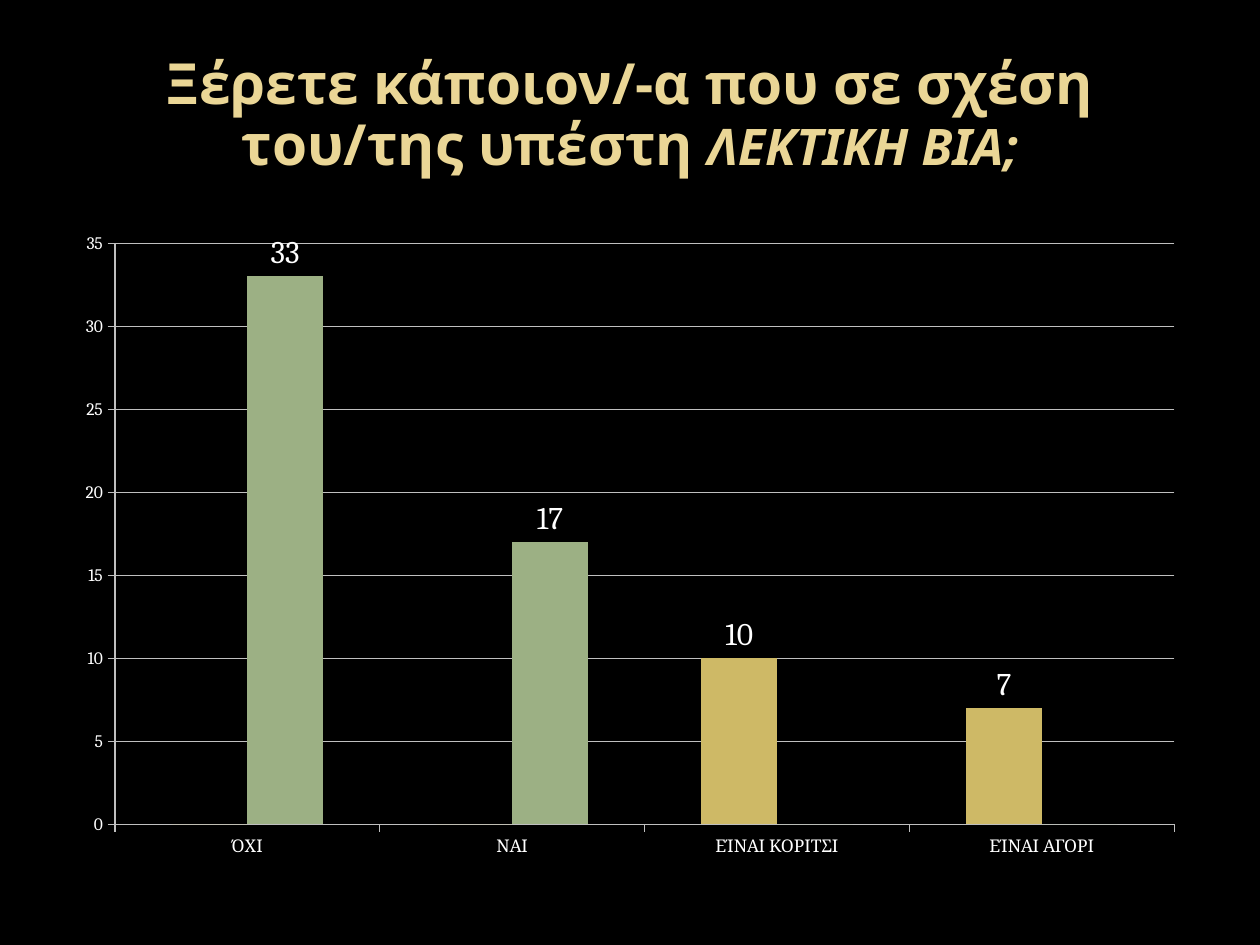
from dataclasses import dataclass

from pptx import Presentation
from pptx.chart.data import CategoryChartData
from pptx.dml.color import RGBColor
from pptx.enum.chart import XL_CHART_TYPE, XL_LABEL_POSITION, XL_TICK_MARK
from pptx.enum.text import MSO_ANCHOR, MSO_AUTO_SIZE, PP_ALIGN
from pptx.util import Inches, Pt


@dataclass(frozen=True)
class Theme:
    background: RGBColor = RGBColor.from_string("000000")
    title: RGBColor = RGBColor.from_string("EAD696")
    text: RGBColor = RGBColor.from_string("FFFFFF")
    line: RGBColor = RGBColor.from_string("BFBFBF")
    title_font: str = "Noto Sans"
    chart_font: str = "Cambria"
    question_size: float = 32.4
    topic_size: float = 28.8
    axis_size: float = 10
    label_size: float = 18


@dataclass(frozen=True)
class Box:
    """Shares of the slide's width and height."""
    left: float
    top: float
    width: float
    height: float

    def lengths(self, deck) -> tuple[int, int, int, int]:
        wide, high = deck.slide_width, deck.slide_height
        return (round(self.left * wide), round(self.top * high),
                round(self.width * wide), round(self.height * high))


@dataclass(frozen=True)
class Answers:
    name: str
    counts: tuple[int, ...]
    color: str


THEME = Theme()
TITLE_BOX = Box(0.05, 0.3 / 7.5, 0.9, 1.25 / 7.5)
CHART_BOX = Box(0.05, 1.75 / 7.5, 0.9, 5.15 / 7.5)
CATEGORIES = ("ΌΧΙ", "ΝΑΙ", "ΕΊΝΑΙ ΚΟΡΙΤΣΙ", "ΕΊΝΑΙ ΑΓΟΡΙ")
SERIES = (
    Answers("Series 1", (0, 0, 10, 7), "CEB966"),
    Answers("Series 2", (33, 17, 0, 0), "9CB084"),
)


def add_title(deck, page) -> None:
    title = page.shapes.title
    title.left, title.top, title.width, title.height = TITLE_BOX.lengths(deck)
    frame = title.text_frame
    frame.word_wrap = True
    frame.auto_size = MSO_AUTO_SIZE.NONE
    frame.vertical_anchor = MSO_ANCHOR.MIDDLE
    para = frame.paragraphs[0]
    para.alignment = PP_ALIGN.CENTER
    para.line_spacing = 0.9
    for words, size, italic in (
        ("Ξέρετε κάποιον/-α που σε σχέση του/της υπέστη ", THEME.question_size, False),
        ("ΛΕΚΤΙΚΗ ΒΙΑ;", THEME.topic_size, True),
    ):
        span = para.add_run()
        span.text = words
        span.font.name = THEME.title_font
        span.font.size = Pt(size)
        span.font.bold = True
        span.font.italic = italic
        span.font.color.rgb = THEME.title


def format_text(font, size: float) -> None:
    font.name = THEME.chart_font
    font.size = Pt(size)
    font.color.rgb = THEME.text


def format_line(line) -> None:
    line.color.rgb = THEME.line
    line.width = Pt(0.75)


def format_series(series, answers: Answers) -> None:
    series.invert_if_negative = False
    series.format.fill.solid()
    series.format.fill.fore_color.rgb = RGBColor.from_string(answers.color)
    labels = series.data_labels
    labels.show_value = True
    labels.position = XL_LABEL_POSITION.OUTSIDE_END
    # The empty sections leave zero counts unlabelled
    labels.number_format = "0;;"
    labels.number_format_is_linked = False
    format_text(labels.font, THEME.label_size)


def add_answer_chart(deck, page) -> None:
    data = CategoryChartData()
    data.categories = CATEGORIES
    for answers in SERIES:
        data.add_series(answers.name, answers.counts)
    chart = page.shapes.add_chart(
        XL_CHART_TYPE.COLUMN_CLUSTERED, *CHART_BOX.lengths(deck), data).chart
    chart.has_legend = False
    chart.has_title = False
    format_text(chart.font, THEME.axis_size)

    # Columns
    plot = chart.plots[0]
    plot.vary_by_categories = False
    plot.gap_width = 150
    plot.overlap = 0
    for series, answers in zip(plot.series, SERIES):
        format_series(series, answers)

    # Axes and grid
    for axis in (chart.category_axis, chart.value_axis):
        axis.major_tick_mark = XL_TICK_MARK.OUTSIDE
        axis.minor_tick_mark = XL_TICK_MARK.NONE
        format_line(axis.format.line)
    value_axis = chart.value_axis
    value_axis.minimum_scale, value_axis.maximum_scale = 0, 35
    value_axis.major_unit = 5
    value_axis.has_major_gridlines = True
    format_line(value_axis.major_gridlines.format.line)


def main() -> None:
    deck = Presentation()
    deck.slide_width, deck.slide_height = Inches(10), Inches(7.5)
    page = deck.slides.add_slide(deck.slide_layouts[5])
    page.background.fill.solid()
    page.background.fill.fore_color.rgb = THEME.background
    add_title(deck, page)
    add_answer_chart(deck, page)
    deck.save("out.pptx")


if __name__ == "__main__":
    main()
